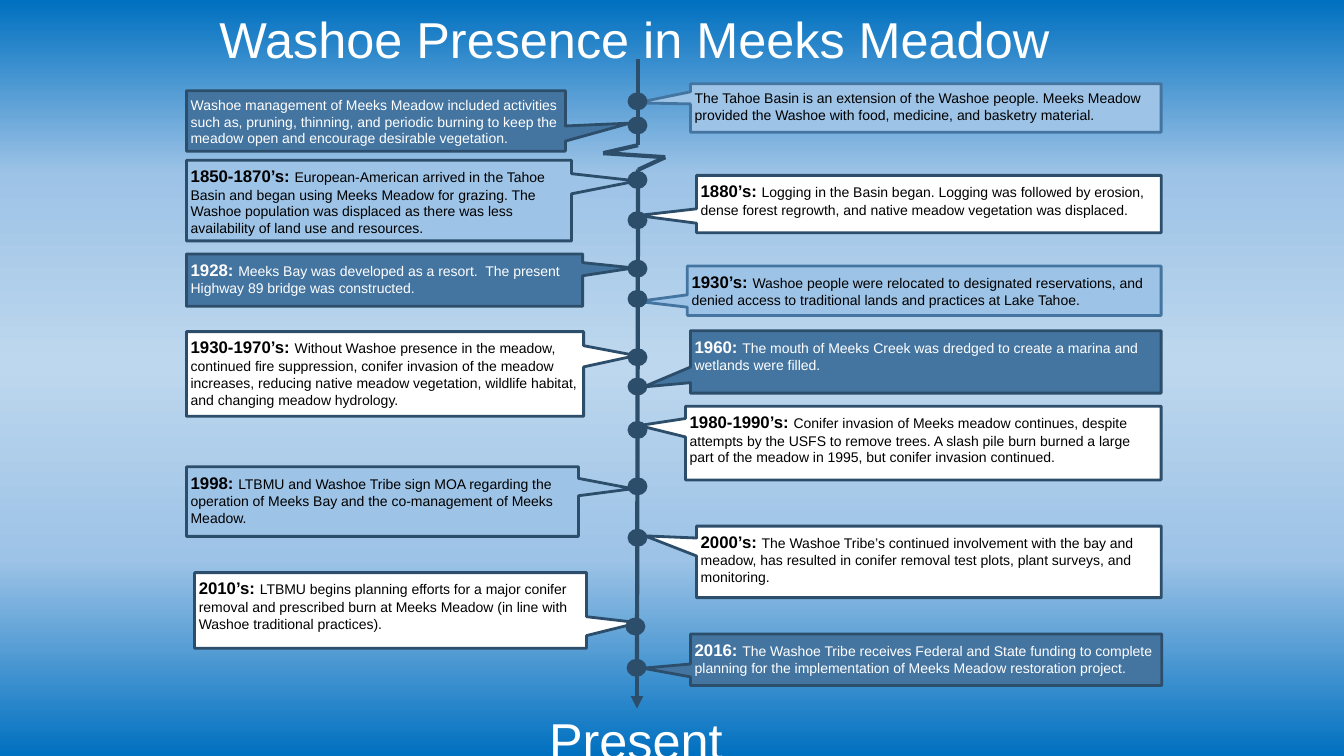
from itertools import pairwise

from lxml.etree import SubElement
from pptx import Presentation
from pptx.dml.color import RGBColor
from pptx.enum.shapes import MSO_CONNECTOR as Conn, MSO_SHAPE as Kind
from pptx.enum.text import MSO_ANCHOR as Anchor, PP_ALIGN as Align
from pptx.oxml.ns import qn
from pptx.util import Pt

NAVY, BLUE, SKY, WHITE, BLACK = "2D4E6B", "4475A1", "9DC3E6", "FFFFFF", "000000"


def color(code):
    return RGBColor.from_string(code)


class Board:
    font = "Arial"
    pad = 3

    def __init__(self, deck):
        self.slide = deck.slides.add_slide(deck.slide_layouts[6])
        self.shapes = self.slide.shapes

    def back(self, stops):
        fill = self.slide.background.fill
        fill.gradient()
        fill.gradient_angle = 270
        bands = fill._fill._gradFill.find(qn("a:gsLst"))
        for old in list(bands):
            bands.remove(old)
        for pos, code in stops:
            stop = SubElement(bands, qn("a:gs"), pos=str(pos * 1000))
            SubElement(stop, qn("a:srgbClr"), val=code)

    def frame(self, shape, top):
        frame = shape.text_frame
        frame.word_wrap = True
        frame.vertical_anchor = Anchor.TOP
        frame.margin_left = frame.margin_right = frame.margin_bottom = Pt(self.pad)
        frame.margin_top = Pt(top)
        return frame.paragraphs[0]

    def title(self, x, y, w, h, text):
        box = self.shapes.add_textbox(Pt(x), Pt(y), Pt(w), Pt(h))
        para = self.frame(box, 6.5)
        para.text = text
        para.alignment = Align.CENTER
        para.font.name, para.font.size = self.font, Pt(36)
        para.font.color.rgb = color(WHITE)

    def shape(self, kind, x, y, w, h, fill, edge):
        shape = self.shapes.add_shape(kind, Pt(x), Pt(y), Pt(w), Pt(h))
        shape.shadow.inherit = False
        shape.fill.solid()
        shape.fill.fore_color.rgb = color(fill)
        shape.line.color.rgb = color(edge)
        shape.line.width = Pt(2)
        return shape

    def note(self, x, y, w, h, tip, fill, edge, date, text):
        shape = self.shape(Kind.RECTANGULAR_CALLOUT, x, y, w, h, fill, edge)
        # The pointer is set as an offset from the centre of the box
        shape.adjustments[0] = (tip[0] - x) / w - 0.5
        shape.adjustments[1] = (tip[1] - y) / h - 0.5
        para = self.frame(shape, 4)
        para.alignment = Align.LEFT
        para.font.name = self.font
        para.font.color.rgb = color(WHITE if fill == BLUE else BLACK)
        if date:
            run = para.add_run()
            run.text = date + " "
            run.font.size, run.font.bold = Pt(12), True
        run = para.add_run()
        run.text = text
        run.font.size = Pt(10)

    def dot(self, x, y):
        self.shape(Kind.OVAL, x, y, 12.2, 10.8, NAVY, NAVY)

    def line(self, start, end, arrow=False):
        line = self.shapes.add_connector(Conn.STRAIGHT, *map(Pt, start + end))
        line.line.color.rgb = color(NAVY)
        line.line.width = Pt(3)
        if arrow:
            SubElement(line.line._get_or_add_ln(), qn("a:tailEnd"), type="triangle")
        SubElement(line._element.spPr, qn("a:effectLst"))


# Each note: left, top, width, height, pointer tip, fill, edge, date, text
NOTES = [
    # Right side
    (493.2, 59.8, 336.2, 34.6, (454.6, 73.5), SKY, BLUE, "",
     "The Tahoe Basin is an extension of the Washoe people. Meeks Meadow "
     "provided the Washoe with food, medicine, and basketry material."),
    (497.5, 125.3, 332, 41, (455.7, 154), WHITE, NAVY, "1880’s:",
     "Logging in the Basin began. Logging was followed by erosion, dense "
     "forest regrowth, and native meadow vegetation was displaced."),
    (491, 190, 338.4, 35.3, (455.8, 215.3), SKY, BLUE, "1930’s:",
     "Washoe people were relocated to designated reservations, and denied "
     "access to traditional lands and practices at Lake Tahoe."),
    (493.2, 236.2, 336.2, 44.6, (459.6, 276.4), BLUE, NAVY, "1960:",
     "The mouth of Meeks Creek was dredged to create a marina and wetlands "
     "were filled."),
    (489.6, 290.2, 339.8, 52.6, (456.6, 304), WHITE, NAVY, "1980-1990’s:",
     "Conifer invasion of Meeks meadow continues, despite attempts by the "
     "USFS to remove trees. A slash pile burn burned a large part of the "
     "meadow in 1995, but conifer invasion continued."),
    (497.5, 375.8, 332, 51.1, (460.7, 382.8), WHITE, NAVY, "2000’s:",
     "The Washoe Tribe’s continued involvement with the bay and meadow, has "
     "resulted in conifer removal test plots, plant surveys, and monitoring."),
    (493.2, 452.9, 336.6, 36.7, (459.2, 477.3), BLUE, NAVY, "2016:",
     "The Washoe Tribe receives Federal and State funding to complete "
     "planning for the implementation of Meeks Meadow restoration project."),
    # Left side
    (133.2, 64.8, 270.7, 43.2, (450, 88), BLUE, NAVY, "",
     "Washoe management of Meeks Meadow included activities such as, pruning, "
     "thinning, and periodic burning to keep the meadow open and encourage "
     "desirable vegetation."),
    (133.2, 114.5, 275, 57.6, (455, 129.3), SKY, NAVY, "1850-1870’s:",
     "European-American arrived in the Tahoe Basin and began using Meeks "
     "Meadow for grazing. The Washoe population was displaced as there was "
     "less availability of land use and resources."),
    (133.2, 181.4, 283, 37.4, (452.7, 191.4), BLUE, NAVY, "1928:",
     "Meeks Bay was developed as a resort.  The present Highway 89 bridge "
     "was constructed."),
    (133.2, 236.9, 283.7, 60.5, (454.3, 254), WHITE, NAVY, "1930-1970’s:",
     "Without Washoe presence in the meadow, continued fire suppression, "
     "conifer invasion of the meadow increases, reducing native meadow "
     "vegetation, wildlife habitat, and changing meadow hydrology."),
    (133.2, 333.4, 280, 49.7, (452, 349.1), SKY, NAVY, "1998:",
     "LTBMU and Washoe Tribe sign MOA regarding the operation of Meeks Bay "
     "and the co-management of Meeks Meadow."),
    (139, 409, 280, 54, (456, 444.8), WHITE, NAVY, "2010’s:",
     "LTBMU begins planning efforts for a major conifer removal and "
     "prescribed burn at Meeks Meadow (in line with Washoe traditional "
     "practices)."),
]
DOTS = [67, 84.2, 123.1, 151.9, 186.5, 208.1, 249.8, 270.7, 301.7, 342, 378.7]
LAST = [(447.8, 442.1), (448.6, 471.6)]
ZIGZAG = [(455.8, 42.5), (455.8, 103.7), (430.9, 109.4), (475.2, 112.3), (455.8, 121.3)]


def main():
    deck = Presentation()
    deck.slide_width, deck.slide_height = Pt(960), Pt(540)
    board = Board(deck)
    board.back([(0, "0070C0"), (23, SKY), (48, "BDD7EE"), (74, SKY), (100, "0070C0")])

    # Time axis below the break, then headings and notes
    board.line((455.8, 121), (455, 478.8))
    board.title(80, -0.7, 746.6, 40.3, "Washoe Presence in Meeks Meadow")
    for note in NOTES:
        board.note(*note)

    # Event dots
    for x, y in [(449.3, y) for y in DOTS] + LAST:
        board.dot(x, y)

    # Start and break of the axis, and its end at the present
    for start, end in pairwise(ZIGZAG):
        board.line(start, end)
    board.title(388, 499.7, 132.5, 25.2, "Present")
    board.line((455, 477.4), (455, 506.2), arrow=True)

    deck.save("out.pptx")


if __name__ == "__main__":
    main()
